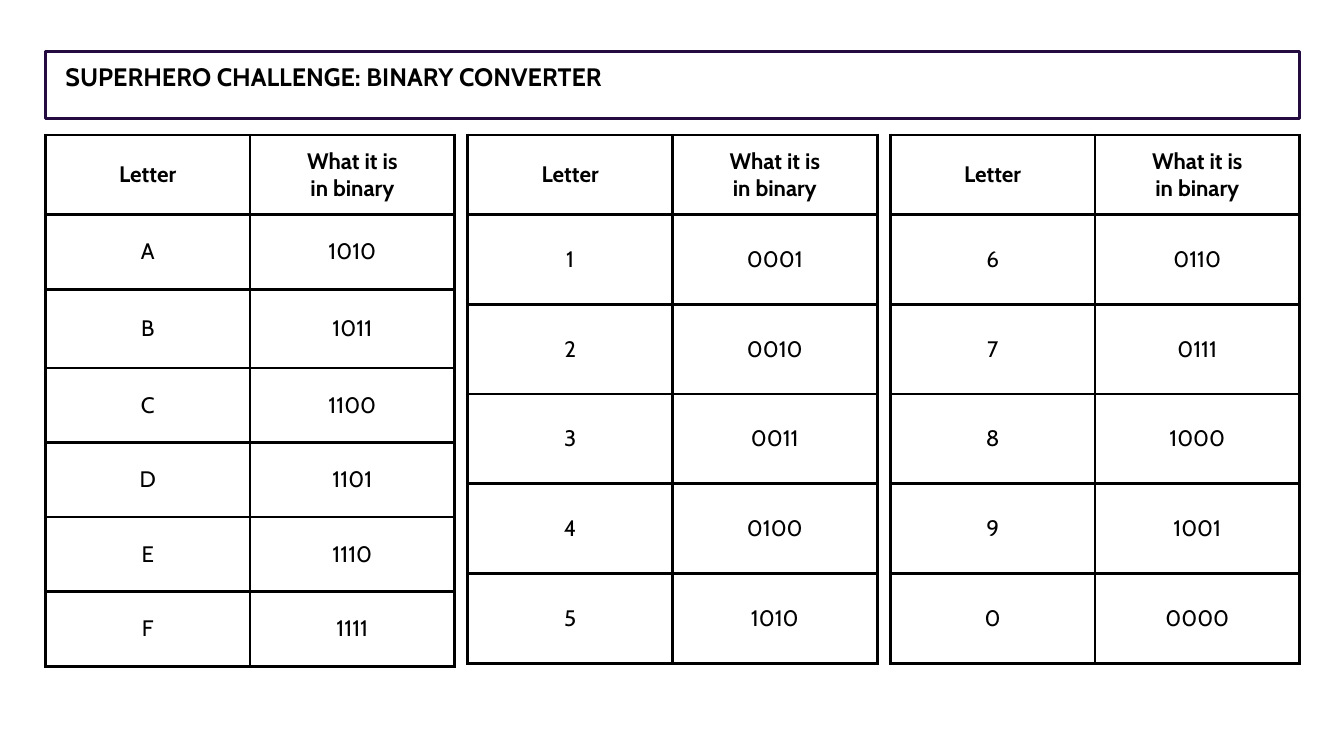
from lxml.etree import SubElement
from pptx import Presentation
from pptx.dml.color import RGBColor
from pptx.enum.shapes import MSO_SHAPE
from pptx.enum.text import MSO_ANCHOR, MSO_AUTO_SIZE, PP_ALIGN
from pptx.oxml.ns import qn
from pptx.util import Inches, Pt

BLACK, WHITE, PURPLE = "000000", "FFFFFF", "240C40"
LEFT, TABLE_TOP, TABLE_STEP = 0.45, 1.34, 4.19
COLUMN_WIDTH, HEADER_HEIGHT = 2.03, 0.79


def color(hex_code):
    return RGBColor.from_string(hex_code)


def add_text(paragraph, text, size, bold=False):
    """Add the text as runs, with a line break at each newline."""
    for number, line in enumerate(text.split("\n")):
        if number:
            paragraph.add_line_break()
        run = paragraph.add_run()
        run.text = line
        run.font.name = "Cabin"
        run.font.size = Pt(size)
        run.font.bold = bold
        run.font.color.rgb = color(BLACK)


presentation = Presentation()
presentation.slide_width = Inches(13.33)
presentation.slide_height = Inches(7.5)
slide = presentation.slides.add_slide(presentation.slide_layouts[6])

# Title bar
title = slide.shapes.add_shape(
    MSO_SHAPE.RECTANGLE, Inches(LEFT), Inches(0.51), Inches(12.44), Inches(0.67))
title.shadow.inherit = False
title.fill.solid()
title.fill.fore_color.rgb = color(WHITE)
title.line.color.rgb = color(PURPLE)
title.line.width = Pt(2.25)
title_text = title.text_frame
title_text.word_wrap = True
title_text.auto_size = MSO_AUTO_SIZE.SHAPE_TO_FIT_TEXT
title_text.vertical_anchor = MSO_ANCHOR.TOP
title_text.margin_left = title_text.margin_right = Inches(0.2)
title_text.margin_top = title_text.margin_bottom = Inches(0.2)
title_line = title_text.paragraphs[0]
title_line.alignment = PP_ALIGN.LEFT
title_line.line_spacing = 0.9
add_text(title_line, "SUPERHERO CHALLENGE: BINARY CONVERTER", 18, bold=True)

# Conversion tables: symbols with their codes, and the heights of the body rows
header = ("Letter", "What it is\nin binary")
conversions = [
    ([("A", "1010"), ("B", "1011"), ("C", "1100"),
      ("D", "1101"), ("E", "1110"), ("F", "1111")],
     [0.74, 0.78, 0.74, 0.74, 0.74, 0.74]),
    ([("1", "0001"), ("2", "0010"), ("3", "0011"), ("4", "0100"), ("5", "1010")],
     [0.89] * 5),
    ([("6", "0110"), ("7", "0111"), ("8", "1000"), ("9", "1001"), ("0", "0000")],
     [0.89] * 5),
]

for position, (codes, body_heights) in enumerate(conversions):
    rows = [header] + codes
    heights = [HEADER_HEIGHT] + body_heights
    table = slide.shapes.add_table(
        len(rows), 2, Inches(LEFT + position * TABLE_STEP), Inches(TABLE_TOP),
        Inches(2 * COLUMN_WIDTH), Inches(sum(heights))).table
    table.horz_banding = False
    for column in table.columns:
        column.width = Inches(COLUMN_WIDTH)
    for row_number, (row, height) in enumerate(zip(rows, heights)):
        table.rows[row_number].height = Inches(height)
        is_header = row_number == 0
        for column_number, text in enumerate(row):
            cell = table.cell(row_number, column_number)
            cell.vertical_anchor = MSO_ANCHOR.MIDDLE
            if not is_header:
                cell.margin_left = cell.margin_right = 0
                cell.margin_top = cell.margin_bottom = 0
            paragraph = cell.text_frame.paragraphs[0]
            paragraph.alignment = PP_ALIGN.CENTER
            add_text(paragraph, text, 16, bold=is_header)
            # Borders come before the fill in the cell properties
            properties = cell._tc.get_or_add_tcPr()
            for side in ("a:lnL", "a:lnR", "a:lnT", "a:lnB"):
                border = SubElement(properties, qn(side), w=str(Pt(2.25)))
                border_fill = SubElement(border, qn("a:solidFill"))
                SubElement(border_fill, qn("a:srgbClr"), val=BLACK)
            cell.fill.solid()
            cell.fill.fore_color.rgb = color(WHITE)

presentation.save("out.pptx")
